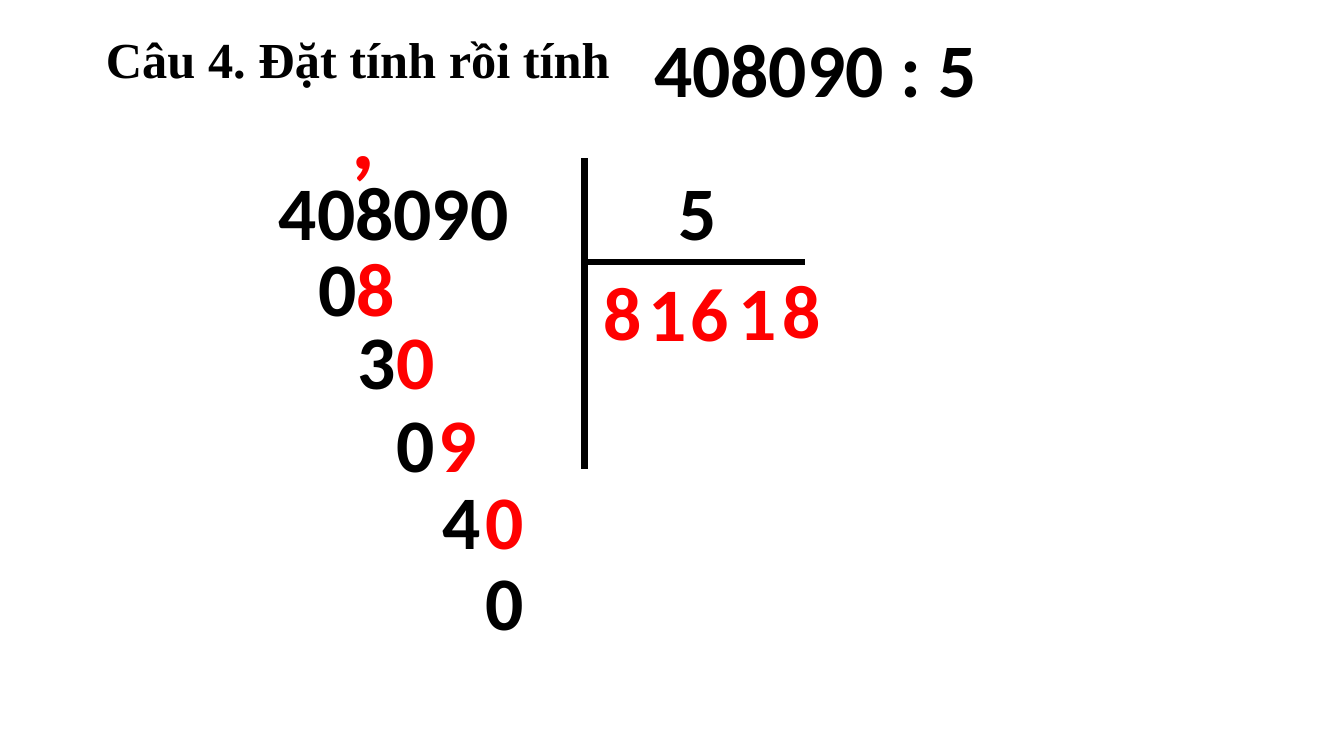
from dataclasses import dataclass

from lxml.etree import SubElement
from pptx import Presentation
from pptx.dml.color import RGBColor
from pptx.enum.shapes import MSO_CONNECTOR
from pptx.enum.text import MSO_ANCHOR, MSO_AUTO_SIZE, PP_ALIGN
from pptx.oxml.ns import qn
from pptx.util import Pt


@dataclass(frozen=True)
class Theme:
    ink: RGBColor = RGBColor(0, 0, 0)
    mark: RGBColor = RGBColor(255, 0, 0)
    head: str = "Times New Roman"
    body: str = "Calibri"
    title: int = 36
    digit: int = 54
    comma: int = 66
    rule: float = 4.5


THEME = Theme()
DIGIT_WIDTH = 48.2


def style(para, text, face, size, color):
    para.text = text
    font = para.font
    font.name, font.size, font.bold = face, Pt(size), True
    font.color.rgb = color


def add_title(slide, text):
    title = slide.shapes.title
    title.left, title.top = Pt(68.4), Pt(10.8)
    title.width, title.height = Pt(391.7), Pt(67)
    title.text_frame.vertical_anchor = MSO_ANCHOR.MIDDLE
    para = title.text_frame.paragraphs[0]
    style(para, text, THEME.head, THEME.title, THEME.ink)
    para.alignment = PP_ALIGN.LEFT
    para.line_spacing = 0.9


def add_text(slide, text, left, top, width=DIGIT_WIDTH,
             color=THEME.ink, size=THEME.digit):
    box = slide.shapes.add_textbox(Pt(left), Pt(top), Pt(width), Pt(size * 1.346))
    frame = box.text_frame
    frame.word_wrap = True
    frame.auto_size = MSO_AUTO_SIZE.SHAPE_TO_FIT_TEXT
    style(frame.paragraphs[0], text, THEME.body, size, color)


def add_rule(slide, *ends):
    rule = slide.shapes.add_connector(MSO_CONNECTOR.STRAIGHT, *map(Pt, ends))
    rule.line.color.rgb = THEME.ink
    rule.line.width = Pt(THEME.rule)
    SubElement(rule._element.spPr, qn("a:effectLst"))


def add_steps(slide):
    steps = [
        ("0", 220.3, "8", 247.7, 168.5),
        ("3", 248.4, "0", 275.8, 221),
        ("0", 276.5, "9", 306, 280),
        ("4", 308.9, "0", 339.8, 334.8),
    ]
    for rest, left, digit, right, top in steps:
        add_text(slide, rest, left, top)
        add_text(slide, digit, right, top, color=THEME.mark)
    add_text(slide, "0", 339.8, 393.1)


def add_answer(slide):
    digits = [
        ("8", 424.1, 185.8),
        ("1", 455.8, 186.5),
        ("6", 486, 186.5),
        ("1", 520.6, 185.8),
        ("8", 552.2, 184.3),
    ]
    for digit, left, top in digits:
        add_text(slide, digit, left, top, color=THEME.mark)


def main():
    deck = Presentation()
    deck.slide_width, deck.slide_height = Pt(960), Pt(540)
    slide = deck.slides.add_slide(deck.slide_layouts[5])
    add_title(slide, "Câu 4. Đặt tính rồi tính")
    add_text(slide, "408090 : 5", 460.1, 12.2, 257.8)
    add_text(slide, "408090", 192.2, 114.5, 190)
    add_text(slide, "5", 477.8, 114.5)
    add_rule(slide, 417.6, 113, 417.6, 334.8)
    add_rule(slide, 417.6, 187.2, 575.3, 187.2)
    add_text(slide, ",", 244.1, 51.8, 50.4, THEME.mark, THEME.comma)
    add_steps(slide)
    add_answer(slide)
    deck.save("out.pptx")


if __name__ == "__main__":
    main()
